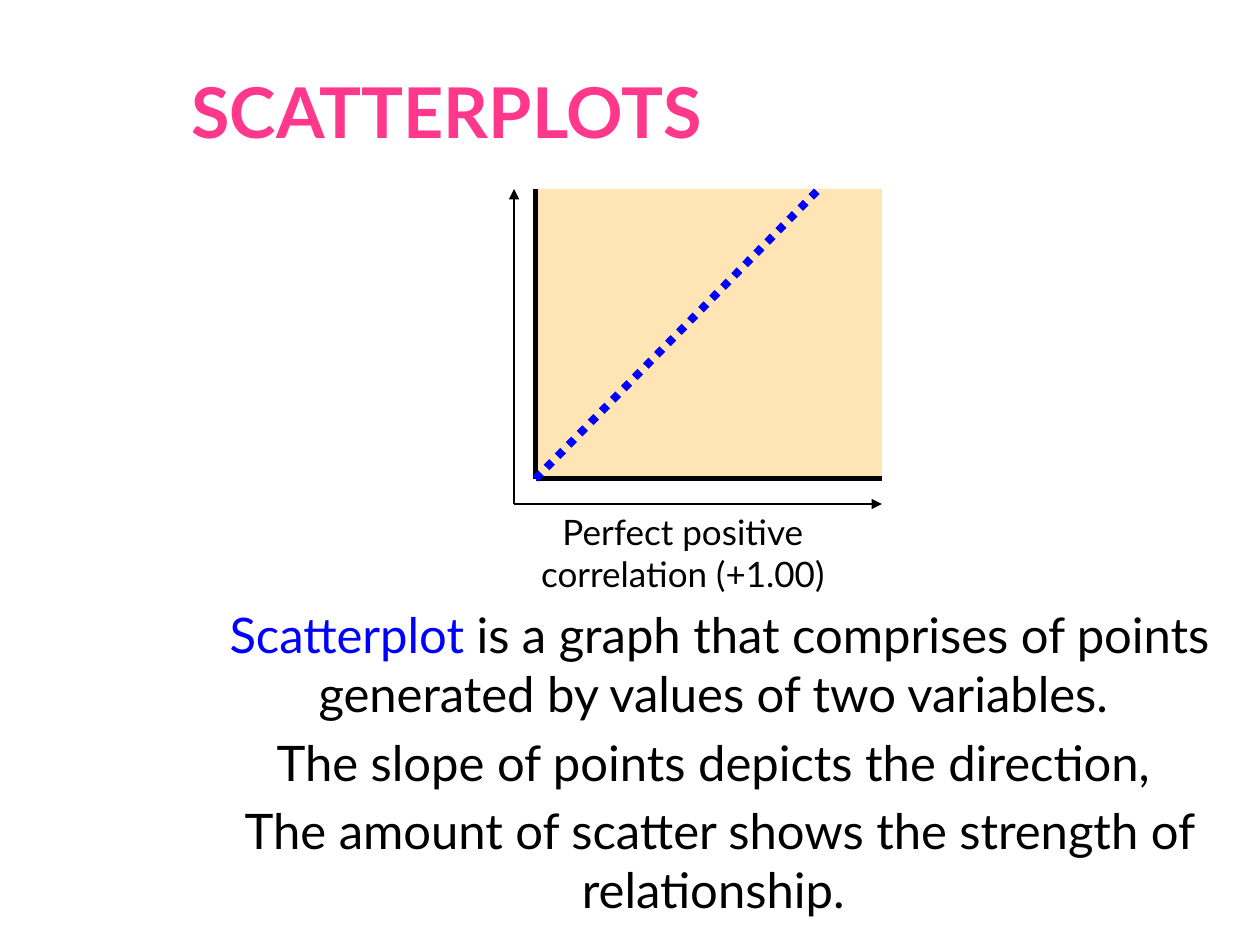
from lxml.etree import SubElement as Sub
from pptx import Presentation
from pptx.dml.color import RGBColor
from pptx.enum.dml import MSO_LINE as Dash
from pptx.enum.shapes import MSO_CONNECTOR as Conn, MSO_SHAPE as Shape
from pptx.enum.text import MSO_ANCHOR as Anchor, MSO_AUTO_SIZE as Auto, PP_ALIGN as Align
from pptx.oxml.ns import qn
from pptx.util import Pt

SCALE = 9144  # EMU per px, 100 px to the inch

BLACK = RGBColor(0x00, 0x00, 0x00)
BLUE = RGBColor(0x00, 0x00, 0xFF)
PINK = RGBColor(0xFF, 0x38, 0x8C)
SAND = RGBColor(0xFF, 0xE5, 0xB5)

HEAD = {"name": "Lato", "size": Pt(40), "bold": True}
BODY = {"name": "Lato", "size": Pt(28)}
NOTE = {"name": "Lato", "size": Pt(20)}


def px(*vals):
    return [val * SCALE for val in vals]


def style(item, form):
    for key, val in form.items():
        setattr(item, key, val)


def add_run(para, text, form, color=BLACK):
    run = para.add_run()
    run.text = text
    style(run.font, form)
    run.font.color.rgb = color


def set_title(slide, text, box):
    title = slide.shapes.title
    style(title, dict(zip(("left", "top", "width", "height"), px(*box))))
    frame = title.text_frame
    left, edge = px(10, 5)
    style(frame, {"margin_left": left, "margin_top": edge, "margin_right": edge,
                  "margin_bottom": edge, "auto_size": Auto.NONE,
                  "vertical_anchor": Anchor.MIDDLE})
    para = frame.paragraphs[0]
    para.alignment = Align.LEFT
    add_run(para, text, HEAD, PINK)


def add_text(slide, box, paras, form, wrap=True, gap=0):
    """Centred text; each paragraph is a list of (text, colour) runs."""
    frame = slide.shapes.add_textbox(*px(*box)).text_frame
    style(frame, {"word_wrap": wrap, "auto_size": Auto.SHAPE_TO_FIT_TEXT})
    for num, runs in enumerate(paras):
        para = frame.add_paragraph() if num else frame.paragraphs[0]
        para.alignment = Align.CENTER
        if num and gap:
            para.space_before = Pt(gap)
        for text, color in runs:
            add_run(para, text, form, color)


def add_rect(group, box, color):
    rect = group.shapes.add_shape(Shape.RECTANGLE, *px(*box))
    rect.shadow.inherit = False
    rect.fill.solid()
    rect.fill.fore_color.rgb = color
    rect.line.fill.background()


def add_line(group, start, end, width, color=BLACK, dash=None, arrow=False):
    conn = group.shapes.add_connector(Conn.STRAIGHT, *px(*start, *end))
    line = conn.line
    line.color.rgb = color
    line.width = Pt(width)
    if dash:
        line.dash_style = dash
    if arrow:
        Sub(line._get_or_add_ln(), qn("a:tailEnd"), type="triangle")
    Sub(conn._element.spPr, qn("a:effectLst"))


def add_plot(slide):
    left, top, right, base = 425, 150, 700, 380
    side, foot = 408, 400
    plot = slide.shapes.add_group_shape()
    add_rect(plot, (left, top, right - left, base - top), SAND)
    # Axes of the plot area
    add_line(plot, (left, top), (left, base), 3)
    add_line(plot, (left, base), (right, base), 3)
    # Arrows for the directions
    for end in ((side, top), (right, foot)):
        add_line(plot, (side, foot), end, 0.75, arrow=True)
    # Points on a rising line
    add_line(plot, (left, base), (650, top), 4.5, BLUE, Dash.ROUND_DOT)


def main():
    deck = Presentation()
    deck.slide_width, deck.slide_height = px(1000, 750)
    slide = deck.slides.add_slide(deck.slide_layouts[5])

    set_title(slide, "SCATTERPLOTS", (142, 25, 783, 125))

    # Graph and its caption
    add_plot(slide)
    add_text(slide, (419, 400, 246, 77),
             [[("Perfect positive", BLACK)], [("correlation (+1.00)", BLACK)]],
             NOTE, wrap=False)

    # Explanation
    add_text(slide, (142, 475, 858, 262), [
        [("Scatterplot ", BLUE),
         ("is a graph that comprises of points generated by values of two variables. ", BLACK)],
        [("The slope of points depicts the direction, ", BLACK)],
        [("The amount of scatter shows the strength of relationship. ", BLACK)],
    ], BODY, gap=5.6)

    deck.save("out.pptx")


if __name__ == "__main__":
    main()
